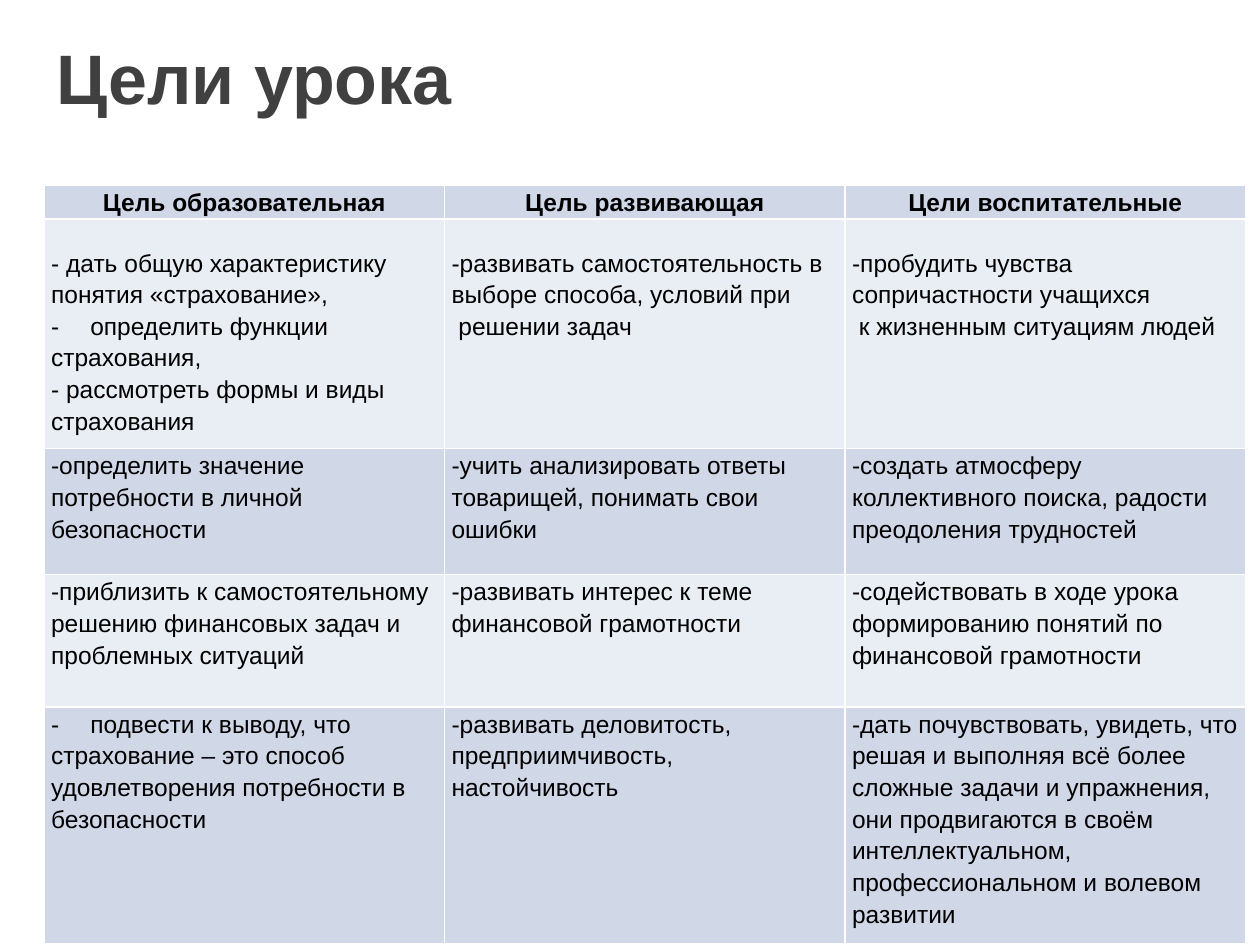
from lxml import etree
from pptx import Presentation
from pptx import util as u
from pptx.dml.color import RGBColor
from pptx.enum import text
from pptx.oxml.ns import qn

BULLET = "-\t"
HEADERS = ["Цель образовательная", "Цель развивающая", "Цели воспитательные"]
GOALS = [
    [
        ["- дать общую характеристику", "понятия «страхование»,",
         BULLET + "определить функции", "страхования,",
         "- рассмотреть формы и виды страхования"],
        ["-развивать самостоятельность в", "выборе способа, условий при",
         " решении задач"],
        ["-пробудить чувства", "сопричастности учащихся",
         " к жизненным ситуациям людей"],
    ],
    [
        ["-определить значение", "потребности в личной", "безопасности"],
        ["-учить анализировать ответы", "товарищей, понимать свои", "ошибки"],
        ["-создать атмосферу", "коллективного поиска, радости",
         "преодоления трудностей"],
    ],
    [
        ["-приблизить к самостоятельному решению финансовых задач и",
         "проблемных ситуаций"],
        ["-развивать интерес к теме", "финансовой грамотности"],
        ["-содействовать в ходе урока", "формированию понятий по",
         "финансовой грамотности"],
    ],
    [
        [BULLET + "подвести к выводу, что", "страхование – это способ",
         "удовлетворения потребности в", "безопасности"],
        ["-развивать деловитость,", "предприимчивость,", "настойчивость"],
        ["-дать почувствовать, увидеть, что решая и выполняя всё более",
         "сложные задачи и упражнения,", "они продвигаются в своём",
         "интеллектуальном, профессиональном и волевом развитии"],
    ],
]
ROW_HEIGHTS = [0.53, 3.76, 2.54, 2.67, 4.29]
BAND_FILLS = ["D0D8E8", "E9EDF4"]
FIRST_GOALS_MARGIN = 0.54


def color(value):
    return RGBColor.from_string(value)


def apply(target, values):
    for name, value in values.items():
        setattr(target, name, value)


def style_font(font, size, fill, bold):
    apply(font, {"name": "Arial", "size": u.Pt(size), "bold": bold})
    font.color.rgb = color(fill)


def add_bullet(para):
    """Give the paragraph a hanging dash."""
    properties = para._p.get_or_add_pPr()
    indent = u.Cm(0.79)
    properties.set("marL", str(indent))
    properties.set("indent", str(-indent))
    etree.SubElement(properties, qn("a:buFont")).set("typeface", "Arial")
    etree.SubElement(properties, qn("a:buChar")).set("char", "-")


def add_borders(cell, fill, width):
    properties = cell._tc.get_or_add_tcPr()
    for place, side in enumerate(["lnL", "lnR", "lnT", "lnB"]):
        line = etree.Element(qn("a:" + side), w=str(u.Pt(width)))
        solid = etree.SubElement(line, qn("a:solidFill"))
        etree.SubElement(solid, qn("a:srgbClr")).set("val", fill)
        properties.insert(place, line)


def fill_cell(cell, lines, fill, top=0, header=False):
    apply(cell, {"margin_left": u.Cm(0.14), "margin_right": u.Cm(0.14),
                 "margin_top": u.Cm(top), "margin_bottom": 0})
    cell.fill.solid()
    cell.fill.fore_color.rgb = color(fill)
    add_borders(cell, "FFFFFF", 1)
    frame = cell.text_frame
    for number, line in enumerate(lines):
        para = frame.add_paragraph() if number else frame.paragraphs[0]
        if line.startswith(BULLET):
            add_bullet(para)
        para.add_run().text = line.removeprefix(BULLET)
        para.line_spacing = 1.15
        para.alignment = text.PP_ALIGN.CENTER if header else text.PP_ALIGN.LEFT
        style_font(para.runs[0].font, 14, "000000", header)


def add_title(page, left, top, width, height):
    box = page.shapes.add_textbox(*map(u.Cm, (left, top, width, height)))
    frame = box.text_frame
    apply(frame, {"word_wrap": True,
                  "vertical_anchor": text.MSO_ANCHOR.MIDDLE})
    span = frame.paragraphs[0].add_run()
    span.text = "Цели урока"
    style_font(span.font, 40, "404040", True)


def add_goals_table(page, left, top, width):
    rows = [[[header] for header in HEADERS]] + GOALS
    table = page.shapes.add_table(
        len(rows), len(HEADERS),
        *map(u.Cm, (left, top, width, sum(ROW_HEIGHTS)))).table
    apply(table, {"first_row": False, "horz_banding": False})
    for column in table.columns:
        column.width = u.Cm(width / len(HEADERS))
    for row, goals in enumerate(rows):
        table.rows[row].height = u.Cm(ROW_HEIGHTS[row])
        for column, lines in enumerate(goals):
            fill_cell(table.cell(row, column), lines, BAND_FILLS[row % 2],
                      top=FIRST_GOALS_MARGIN if row == 1 else 0,
                      header=row == 0)


def main():
    deck = Presentation()
    apply(deck, {"slide_width": u.Cm(25.4), "slide_height": u.Cm(19.05)})
    page = deck.slides.add_slide(deck.slide_layouts[6])
    add_title(page, 0.89, 0.05, 24.51, 2.97)
    add_goals_table(page, 0.89, 3.73, 24.22)
    deck.save("out.pptx")


if __name__ == "__main__":
    main()
